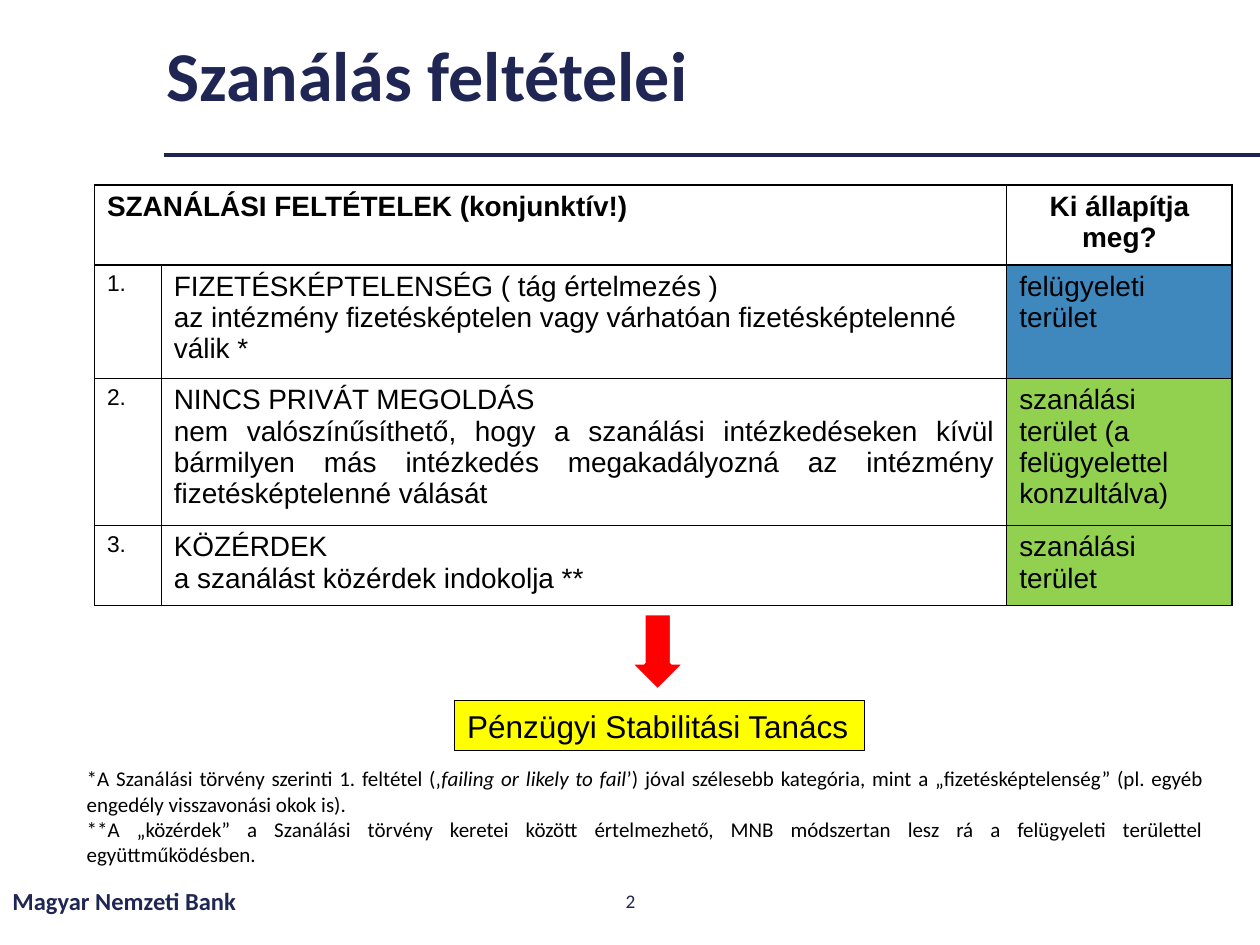
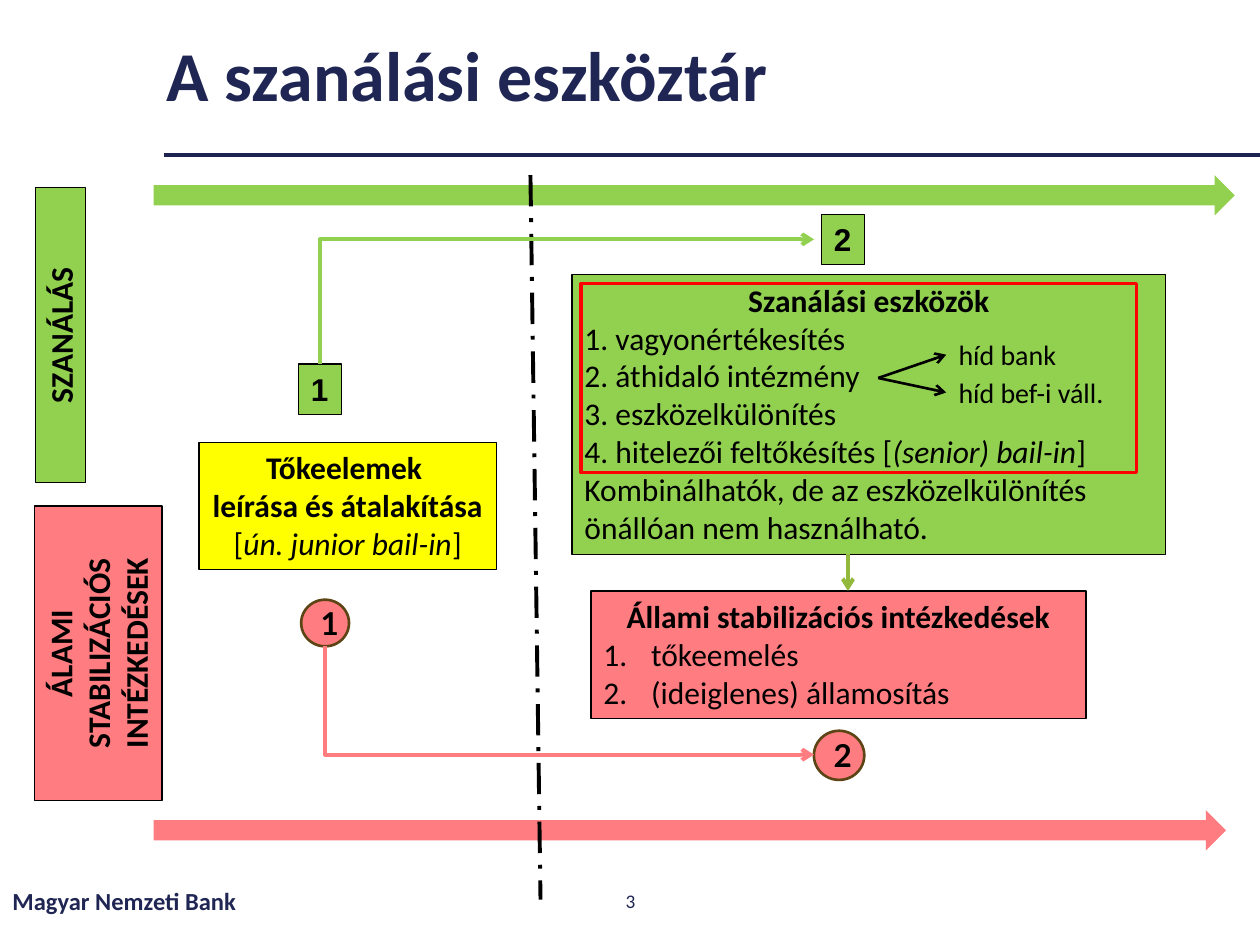
"""Build two slides on the conditions and the tools of resolution."""
from dataclasses import dataclass

from lxml import etree
from pptx import Presentation
from pptx.dml.color import RGBColor
from pptx.enum import dml, shapes, text
from pptx.oxml.ns import qn
from pptx.util import Pt

PX = 9144
SLIDE_W, SLIDE_H = 1000, 750


@dataclass(frozen=True)
class Theme:
    navy: str = "202653"
    rule: str = "1E2452"
    black: str = "000000"
    white: str = "FFFFFF"
    blue: str = "3E88BE"
    green: str = "92D050"
    olive: str = "92B93B"
    pink: str = "FF7C80"
    brown: str = "5D4415"
    yellow: str = "FFFF00"
    red: str = "FF0000"
    sans: str = "Calibri"
    table_font: str = "Arial"
    badge_font: str = "Lato"
    title: int = 40
    body: int = 18
    cell: int = 16
    footer: int = 14
    index: int = 13
    note: int = 12
    page: int = 11


T = Theme()

FOOTER = "Magyar Nemzeti Bank"
TITLES = {2: "Szanálás feltételei", 3: "A szanálási eszköztár"}

CONDITION_HEADS = ("SZANÁLÁSI FELTÉTELEK (konjunktív!)", "Ki állapítja meg?")
CONDITIONS = [
    ("FIZETÉSKÉPTELENSÉG ( tág értelmezés )", "left",
     "az intézmény fizetésképtelen vagy várhatóan fizetésképtelenné válik *",
     "felügyeleti terület", T.blue),
    ("NINCS PRIVÁT MEGOLDÁS", "justify",
     "nem valószínűsíthető, hogy a szanálási intézkedéseken kívül bármilyen más "
     "intézkedés megakadályozná az intézmény fizetésképtelenné válását",
     "szanálási terület (a felügyelettel konzultálva)", T.green),
    ("KÖZÉRDEK", "left", "a szanálást közérdek indokolja **",
     "szanálási terület", T.green),
]
CONDITION_COLS = (53, 671, 179)
CONDITION_ROWS = (63, 84, 109, 63)
COUNCIL = [("left", [("Pénzügyi Stabilitási Tanács", "")])]
NOTES = [
    ("justify", [("*A Szanálási törvény szerinti 1. feltétel (‚", ""),
                 ("failing or likely to fail", "i"),
                 ("’) jóval szélesebb kategória, mint a „fizetésképtelenség” "
                  "(pl. egyéb engedély visszavonási okok is). ", "")]),
    ("justify", [("**A „közérdek” a Szanálási törvény keretei között értelmezhető, "
                  "MNB módszertan lesz rá a felügyeleti területtel "
                  "együttműködésben.", "")]),
]

CAPITAL = [
    ("center", [("Tőkeelemek ", "b")]),
    ("center", [("leírása és átalakítása", "b")]),
    ("center", [("[", ""), ("ún. junior bail-in", "i"), ("]", "")]),
]
TOOLS = [
    ("center", [("Szanálási eszközök", "b")]),
    ("left", [("1. vagyonértékesítés", "")]),
    ("left", [("2. áthidaló intézmény", "")]),
    ("left", [("3. eszközelkülönítés", "")]),
    ("left", [("4. hitelezői feltőkésítés [", ""), ("(senior) bail-in", "i"), ("]", "")]),
    ("left", [("Kombinálhatók, de az eszközelkülönítés", "")]),
    ("left", [("önállóan nem használható.", "")]),
]
STATE_MEASURES = [
    ("center", [("Állami stabilizációs intézkedések", "b")]),
    ("number", [("tőkeemelés", "")]),
    ("number", [("(ideiglenes) államosítás", "")]),
]
BLOCKS = [
    (CAPITAL, (158, 351, 236, 101), T.yellow, False),
    (TOOLS, (454, 218, 471, 222), T.green, True),
    (STATE_MEASURES, (469, 469, 393, 101), T.pink, False),
]
TIMELINES = [((122, 139, 858, 32), T.green), ((122, 643, 851, 32), T.pink)]
RESOLUTION_STEPS = [("1", (237, 289, 34, 40)), ("2", (652, 170, 34, 40))]
STATE_STEPS = [("1", (239, 476, 38, 37)), ("2", (646, 580, 40, 39))]
TRACKS = [
    ("SZANÁLÁS", (-69, 246, 234, 40), T.green),
    ("ÁLAMI STABILIZÁCIÓS INTÉZKEDÉSEK", (-39, 468, 234, 101), T.pink),
]
STEP_PATHS = [((254, 289), (646, 190), T.green), ((258, 513), (646, 599), T.pink)]
FORK = (697, 300)
BRIDGES = [("híd bank", (751, 263, 110, 37)), ("híd bef-i váll.", (751, 293, 144, 37))]

ALIGN = {
    "left": text.PP_ALIGN.LEFT,
    "number": text.PP_ALIGN.LEFT,
    "center": text.PP_ALIGN.CENTER,
    "justify": text.PP_ALIGN.JUSTIFY,
}


def emu(*lengths):
    return [round(length * PX) for length in lengths]


def rgb(colour):
    return RGBColor.from_string(colour)


def number(paragraph, indent=38):
    props = paragraph._p.get_or_add_pPr()
    props.set("marL", str(indent * PX))
    props.set("indent", str(-indent * PX))
    etree.SubElement(props, qn("a:buAutoNum"), type="arabicPeriod")


def write(frame, paragraphs, size, font=T.sans, colour=T.black):
    for place, (align, runs) in enumerate(paragraphs):
        paragraph = frame.add_paragraph() if place else frame.paragraphs[0]
        paragraph.alignment = ALIGN[align]
        if align == "number":
            number(paragraph)
        for words, style in runs:
            run = paragraph.add_run()
            run.text = words
            run.font.name, run.font.size = font, Pt(size)
            run.font.bold, run.font.italic = "b" in style, "i" in style
            run.font.color.rgb = rgb(colour)


def add_label(slide, box, paragraphs, size, colour=T.black, middle=False):
    label = slide.shapes.add_textbox(*emu(*box))
    label.text_frame.word_wrap = True
    if middle:
        label.text_frame.vertical_anchor = text.MSO_ANCHOR.MIDDLE
    write(label.text_frame, paragraphs, size, colour=colour)
    return label


def add_figure(slide, preset, box, fill=None, edge=None, width=0.75):
    figure = slide.shapes.add_shape(preset, *emu(*box))
    figure.shadow.inherit = False
    if fill:
        figure.fill.solid()
        figure.fill.fore_color.rgb = rgb(fill)
    else:
        figure.fill.background()
    if edge:
        figure.line.color.rgb = rgb(edge)
        figure.line.width = Pt(width)
    else:
        figure.line.fill.background()
    return figure


def add_block(slide, box, fill, paragraphs, font=T.sans, wrap=True):
    block = add_figure(slide, shapes.MSO_SHAPE.RECTANGLE, box, fill, T.black)
    block.text_frame.word_wrap = wrap
    block.text_frame.vertical_anchor = text.MSO_ANCHOR.TOP
    write(block.text_frame, paragraphs, T.body, font)
    return block


def add_line(slide, start, end, colour, width=2.25, arrow=True, dash=None,
             kind=shapes.MSO_CONNECTOR.STRAIGHT):
    line = slide.shapes.add_connector(kind, *emu(*start, *end))
    line.line.color.rgb = rgb(colour)
    line.line.width = Pt(width)
    if dash:
        line.line.dash_style = dash
    if arrow:
        etree.SubElement(line.line._ln, qn("a:tailEnd"), type="arrow")
    etree.SubElement(line._element.spPr, qn("a:effectLst"))
    return line


def add_corner(slide, start, end, colour):
    (x1, y1), (x2, y2) = start, end
    rising = y2 < y1
    across, along = abs(y2 - y1), x2 - x1
    corner = add_line(slide, start, end, colour, kind=shapes.MSO_CONNECTOR.ELBOW)
    corner.left, corner.top, corner.width, corner.height = emu(
        (x1 + x2 - across) / 2, (y1 + y2 - along) / 2, across, along)
    props = corner._element.spPr
    props.find(qn("a:prstGeom")).set("prst", "bentConnector2")
    turn = props.find(qn("a:xfrm"))
    turn.set("rot", str((90 if rising else 270) * 60000))
    turn.set("flipH", "1")
    turn.set("flipV", str(int(rising)))


def start_slide(deck, page):
    slide = deck.slides.add_slide(deck.slide_layouts[6])
    add_line(slide, (130, 123), (SLIDE_W, 123), T.rule, arrow=False)
    title = add_label(slide, (122, 21, 819, 83), [("left", [(TITLES[page], "b")])],
                      T.title, T.navy, middle=True)
    title.text_frame.paragraphs[0].line_spacing = 0.9
    add_label(slide, (0, 695, 338, 40), [("left", [(FOOTER, "b")])],
              T.footer, T.navy, middle=True)
    add_label(slide, (388, 695, 225, 40), [("center", [(str(page), "")])],
              T.page, T.navy, middle=True)
    return slide


def fill_cell(cell, paragraphs, size=T.cell, fill=T.white):
    cell.fill.solid()
    cell.fill.fore_color.rgb = rgb(fill)
    write(cell.text_frame, paragraphs, size, T.table_font)


def border_cell(cell):
    props = cell._tc.get_or_add_tcPr()
    for place, side in enumerate(("lnL", "lnR", "lnT", "lnB")):
        edge = etree.Element(qn(f"a:{side}"), w=str(Pt(1)))
        paint = etree.SubElement(edge, qn("a:solidFill"))
        etree.SubElement(paint, qn("a:srgbClr"), val=T.black)
        props.insert(place, edge)


def add_conditions(slide):
    table = slide.shapes.add_table(
        len(CONDITION_ROWS), len(CONDITION_COLS),
        *emu(75, 147, sum(CONDITION_COLS), sum(CONDITION_ROWS))).table
    table.first_row = table.horz_banding = False
    for column, width in zip(table.columns, CONDITION_COLS):
        column.width = width * PX
    for row, height in zip(table.rows, CONDITION_ROWS):
        row.height = height * PX
    condition_head, decider_head = CONDITION_HEADS
    table.cell(0, 0).merge(table.cell(0, 1))
    fill_cell(table.cell(0, 0), [("left", [(condition_head, "b")])])
    fill_cell(table.cell(0, 2), [("center", [(decider_head, "b")])])
    for row, (name, align, meaning, decider, fill) in enumerate(CONDITIONS, 1):
        fill_cell(table.cell(row, 0), [("left", [(f"{row}.", "")])], T.index)
        fill_cell(table.cell(row, 1),
                  [("left", [(name, "")]), (align, [(meaning, "")])])
        fill_cell(table.cell(row, 2), [("left", [(decider, "")])], fill=fill)
    for cell in table.iter_cells():
        border_cell(cell)


def build_conditions(deck):
    slide = start_slide(deck, 2)
    add_conditions(slide)
    add_label(slide, (59, 603, 906, 91), NOTES, T.note)
    add_figure(slide, shapes.MSO_SHAPE.DOWN_ARROW, (500, 487, 44, 61), T.red, T.white, 2)
    add_block(slide, (361, 556, 325, 40), T.yellow, COUNCIL, T.table_font, wrap=False)


def build_tools(deck):
    slide = start_slide(deck, 3)
    for paragraphs, box, fill, wrap in BLOCKS:
        add_block(slide, box, fill, paragraphs, wrap=wrap)
    for box, fill in TIMELINES:
        add_figure(slide, shapes.MSO_SHAPE.RIGHT_ARROW, box, fill)
    for step, box in RESOLUTION_STEPS:
        add_block(slide, box, T.green, [("left", [(step, "b")])], T.table_font, wrap=False)
    for step, box in STATE_STEPS:
        badge = add_figure(slide, shapes.MSO_SHAPE.OVAL, box, T.pink, T.brown, 1.5)
        write(badge.text_frame, [("center", [(step, "b")])], T.body, T.badge_font)
    for track, box, fill in TRACKS:
        add_block(slide, box, fill, [("center", [(track, "b")])]).rotation = 270
    add_figure(slide, shapes.MSO_SHAPE.RECTANGLE, (461, 225, 441, 150), edge=T.red, width=2)
    add_line(slide, (421, 139), (429, 714), T.black, arrow=False,
             dash=dml.MSO_LINE.LONG_DASH_DOT)
    for start, end, colour in STEP_PATHS:
        add_corner(slide, start, end, colour)
    add_line(slide, (673, 440), (673, 469), T.olive)
    for bridge, box in BRIDGES:
        label = add_label(slide, box, [("left", [(bridge, "")])], T.cell)
        left, top, _, height = box
        branch = add_line(slide, FORK, (left, top + height / 2), T.black, 1.5)
        branch.end_connect(label, 1)


def main():
    deck = Presentation()
    deck.slide_width, deck.slide_height = emu(SLIDE_W, SLIDE_H)
    build_conditions(deck)
    build_tools(deck)
    deck.save("out.pptx")


if __name__ == "__main__":
    main()
